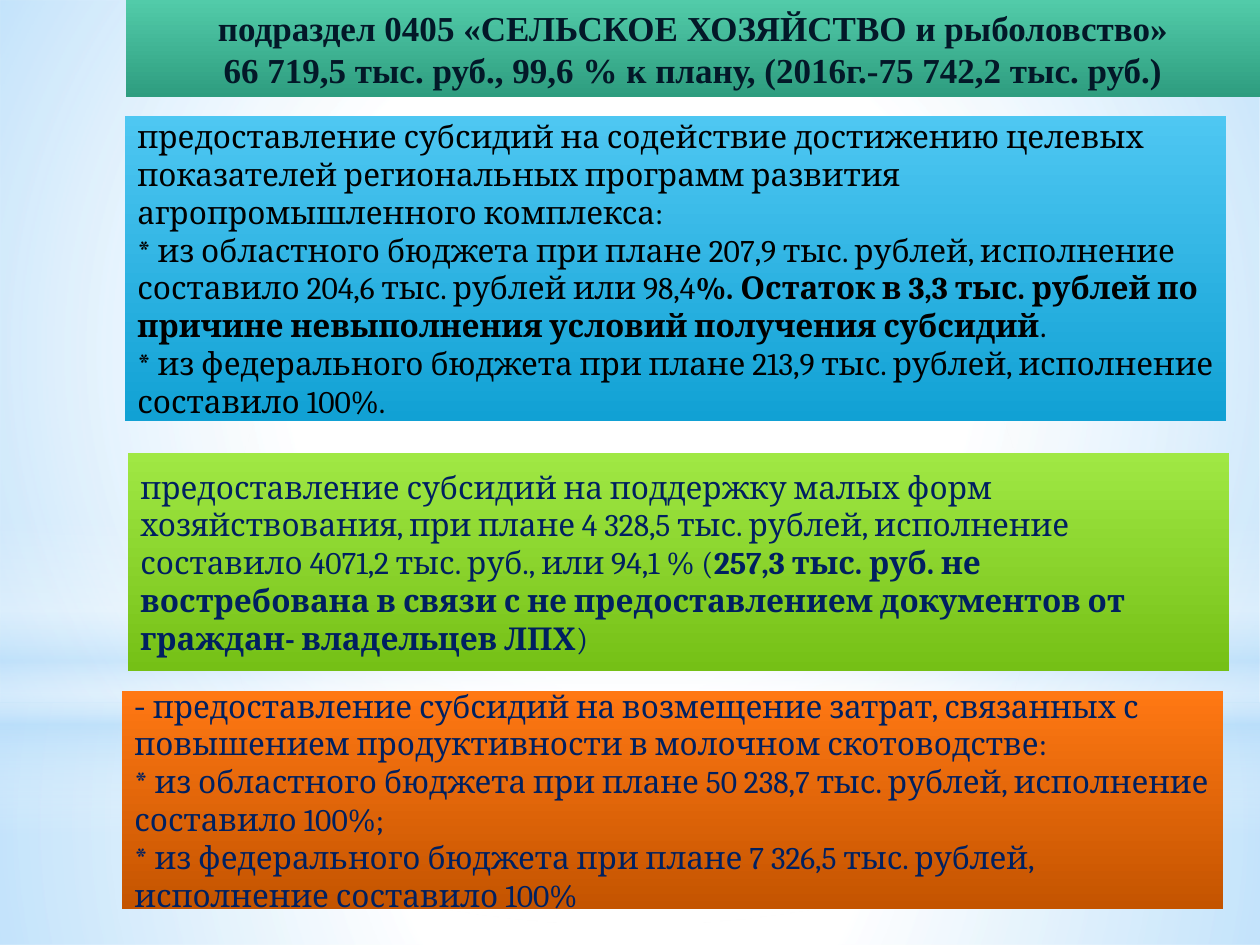
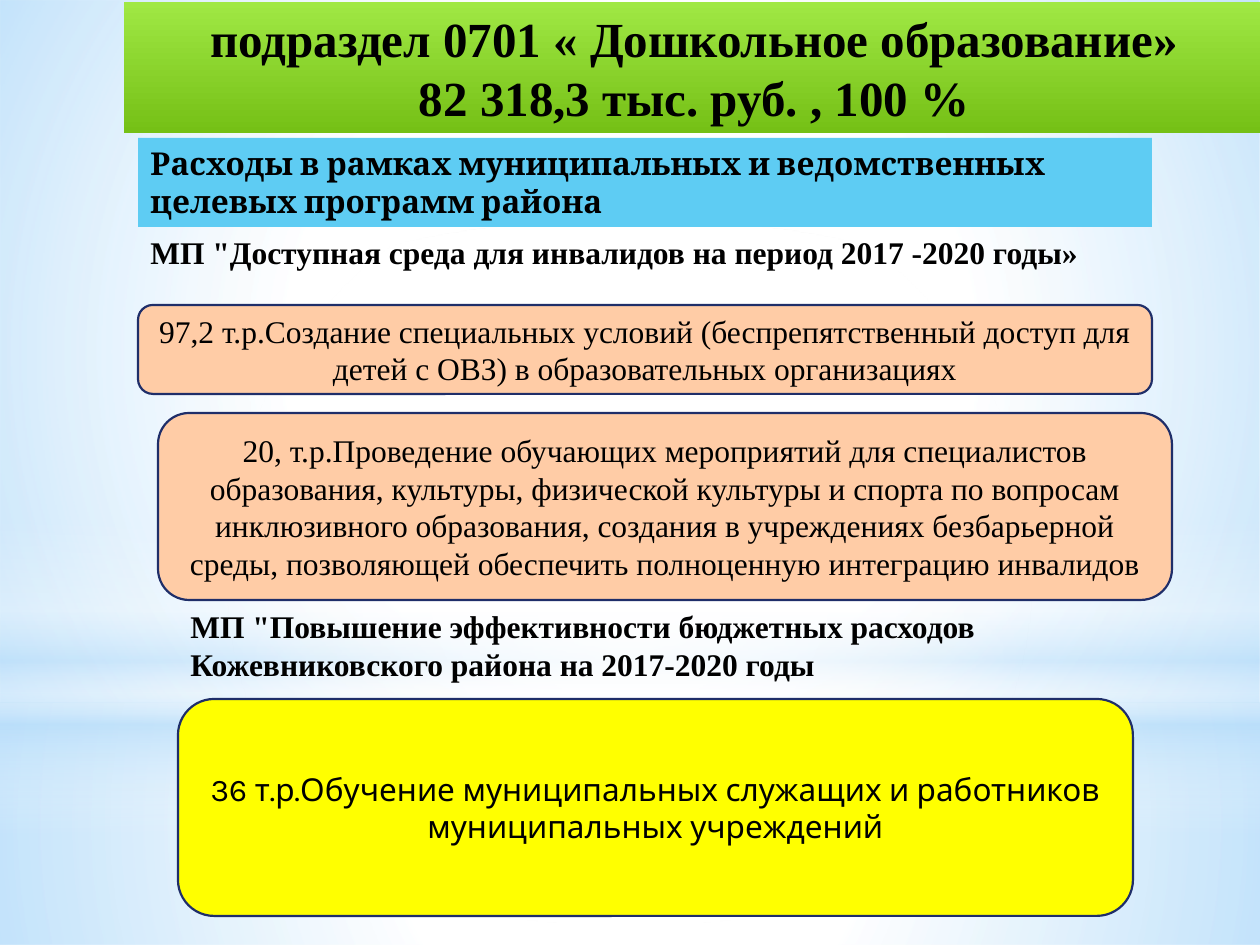
import pptx
import pptx.util
import pptx.dml.color
import pptx.enum.shapes
import pptx.enum.text
import pptx.oxml
import pptx.oxml.ns

RGB = pptx.dml.color.RGBColor
SHAPE = pptx.enum.shapes.MSO_SHAPE
ALIGN = pptx.enum.text.PP_ALIGN
ANCHOR = pptx.enum.text.MSO_ANCHOR
PX = 914400 / 126

WHITE = RGB(0xFF, 0xFF, 0xFF)
MIST = RGB(0xB4, 0xDC, 0xFA)
BLACK = RGB(0, 0, 0)
INK = RGB(0x03, 0x18, 0x28)
NAVY = RGB(0x00, 0x20, 0x60)
OUTLINE = RGB(0x1F, 0x2E, 0x69)
SKY = RGB(0x5E, 0xCC, 0xF3)
PEACH = RGB(0xFF, 0xCC, 0xA6)
YELLOW = RGB(0xFF, 0xFF, 0x00)
TEAL_BLEND = [(0, RGB(0x52, 0xCB, 0xA9), 100), (100, RGB(0x2E, 0x9D, 0x7F), 100)]
BLUE_BLEND = [(0, RGB(0x4E, 0xC7, 0xF2), 100), (100, RGB(0x11, 0xA1, 0xD4), 100)]
GREEN_BLEND = [(0, RGB(0xA0, 0xE8, 0x44), 100), (100, RGB(0x75, 0xC0, 0x16), 100)]
ORANGE_BLEND = [(0, RGB(0xFF, 0x78, 0x13), 100), (100, RGB(0xC4, 0x54, 0x00), 100)]

SERIF = "Times New Roman"
BOOK = "Cambria"
SANS = "Karla"


def add_shape(page, kind, place, fill, radial=False):
    shape = page.shapes.add_shape(kind, *[round(n * PX) for n in place])
    shape.shadow.inherit = False
    shape.line.fill.background()
    if fill is None:
        shape.fill.background()
    elif isinstance(fill, RGB):
        shape.fill.solid()
        shape.fill.fore_color.rgb = fill
    else:
        stops = "".join(
            f'<a:gs pos="{at * 1000}"><a:srgbClr val="{color}">'
            f'<a:alpha val="{opacity * 1000}"/></a:srgbClr></a:gs>'
            for at, color, opacity in fill)
        course = '<a:lin ang="5400000" scaled="0"/>'
        if radial:
            course = ('<a:path path="circle"><a:fillToRect l="50000" t="50000" '
                      'r="50000" b="50000"/></a:path>')
        blend = pptx.oxml.parse_xml(
            f'<a:gradFill {pptx.oxml.ns.nsdecls("a")} rotWithShape="1">'
            f'<a:gsLst>{stops}</a:gsLst>{course}</a:gradFill>')
        shape.element.spPr.find(pptx.oxml.ns.qn("a:prstGeom")).addnext(blend)
    return shape


def write(shape, paragraphs, font, size, color, align=ALIGN.LEFT, anchor=ANCHOR.MIDDLE):
    frame = shape.text_frame
    frame.word_wrap = True
    frame.vertical_anchor = anchor
    for index, spans in enumerate(paragraphs):
        para = frame.paragraphs[0] if index == 0 else frame.add_paragraph()
        para.alignment = align
        for text, bold, *other_font in spans:
            span = para.add_run()
            span.text = text
            span.font.name = other_font[0] if other_font else font
            span.font.size = pptx.util.Pt(size)
            span.font.bold = bold
            span.font.color.rgb = color


deck = pptx.Presentation()
deck.slide_width = round(1260 * PX)
deck.slide_height = round(945 * PX)
farming, preschool = [deck.slides.add_slide(deck.slide_layouts[6]) for _ in range(2)]

backdrop = [
    (SHAPE.RECTANGLE, (0, 703, 1260, 242), True,
     [(0, WHITE, 91), (37, WHITE, 76), (100, MIST, 79)]),
    (SHAPE.RECTANGLE, (0, 0, 1260, 703), True,
     [(0, WHITE, 89), (48, WHITE, 62), (100, MIST, 79)]),
    (SHAPE.RECTANGLE, (0, 519, 1260, 315), False,
     [(0, WHITE, 0), (29, WHITE, 30), (45, MIST, 40),
      (55, WHITE, 26), (65, MIST, 60), (100, WHITE, 0)]),
    (SHAPE.OVAL, (0, 220, 1260, 703), True, [(0, WHITE, 100), (56, WHITE, 0)]),
]
master_tree = deck.slide_master.shapes.element
for index, (kind, place, radial, stops) in enumerate(backdrop):
    glow = add_shape(farming, kind, place, stops, radial)
    glow.element.nvSpPr.cNvPr.set("id", str(100 + index))
    master_tree.insert(2 + index, glow.element)

subsidies = [
    ((125, 116, 1101, 305), BLUE_BLEND, BLACK, [
        [("предоставление субсидий на содействие достижению целевых показателей "
          "региональных программ развития агропромышленного комплекса:", False)],
        [("* из областного бюджета при плане 207,9 тыс. рублей, исполнение "
          "составило 204,6 тыс. рублей или 98,4", False),
         ("%. Остаток в 3,3 тыс. рублей по причине невыполнения условий "
          "получения субсидий", True),
         (".", False)],
        [("* из федерального бюджета при плане 213,9 тыс. рублей, исполнение "
          "составило 100%.", False)]]),
    ((128, 453, 1101, 218), GREEN_BLEND, NAVY, [
        [("предоставление субсидий на поддержку малых форм хозяйствования, при "
          "плане 4 328,5 тыс. рублей, исполнение составило 4071,2 тыс. руб., "
          "или 94,1 % (", False),
         ("257,3 тыс. руб. не востребована в связи с не предоставлением "
          "документов от граждан- владельцев ЛПХ", True),
         (")", False)]]),
    ((122, 691, 1101, 218), ORANGE_BLEND, NAVY, [
        [("- ", False, SANS),
         ("предоставление субсидий на возмещение затрат, связанных с повышением "
          "продуктивности в молочном скотоводстве:", False)],
        [("* из областного бюджета при плане 50 238,7 тыс. рублей, исполнение "
          "составило 100%;", False)],
        [("* из федерального бюджета при плане 7 326,5 тыс. рублей, исполнение "
          "составило 100%", False)]]),
]
for place, blend, color, paragraphs in subsidies:
    panel = add_shape(farming, SHAPE.RECTANGLE, place, blend)
    write(panel, paragraphs, BOOK, 18, color)

titles = [
    (farming, (126, 0, 1134, 97), TEAL_BLEND, INK, 20,
     ["подраздел 0405 «СЕЛЬСКОЕ ХОЗЯЙСТВО и рыболовство»",
      "66 719,5 тыс. руб., 99,6 % к плану, (2016г.-75 742,2 тыс. руб.)"]),
    (preschool, (124, 2, 1140, 131), GREEN_BLEND, BLACK, 28,
     ["подраздел 0701 « Дошкольное образование»",
      "82 318,3 тыс. руб. , 100 %"]),
]
for page, place, blend, color, size, lines in titles:
    band = add_shape(page, SHAPE.RECTANGLE, place, blend)
    write(band, [[(line, True)] for line in lines], SERIF, size, color,
          ALIGN.CENTER, ANCHOR.TOP)

headings = [
    ((138, 138, 1014, 89), SKY, BOOK,
     "Расходы в рамках муниципальных и ведомственных целевых программ района"),
    ((138, 227, 1014, 50), None, SERIF,
     "МП \"Доступная среда для инвалидов на период 2017 -2020 годы»"),
    ((178, 601, 1014, 89), None, SERIF,
     "МП \"Повышение эффективности бюджетных расходов Кожевниковского района "
     "на 2017-2020 годы"),
]
for place, fill, font, text in headings:
    if fill is None:
        heading = preschool.shapes.add_textbox(*[round(n * PX) for n in place])
    else:
        heading = add_shape(preschool, SHAPE.RECTANGLE, place, fill)
    write(heading, [[(text, True)]], font, 18, BLACK, anchor=ANCHOR.TOP)

measures = [
    ((138, 305, 1014, 89), PEACH, SERIF,
     "97,2 т.р.Создание специальных условий (беспрепятственный доступ для детей "
     "с ОВЗ) в образовательных организациях"),
    ((158, 413, 1014, 187), PEACH, SERIF,
     "20, т.р.Проведение обучающих мероприятий для специалистов образования, "
     "культуры, физической культуры и спорта по вопросам инклюзивного "
     "образования, создания в учреждениях безбарьерной среды, позволяющей "
     "обеспечить полноценную интеграцию инвалидов"),
    ((178, 699, 955, 217), YELLOW, SANS,
     "36 т.р.Обучение муниципальных служащих и работников муниципальных учреждений"),
]
for place, fill, font, text in measures:
    card = add_shape(preschool, SHAPE.ROUNDED_RECTANGLE, place, fill)
    card.line.color.rgb = OUTLINE
    card.line.width = pptx.util.Pt(1.25)
    write(card, [[(text, False)]], font, 18, BLACK, ALIGN.CENTER)

deck.save("out.pptx")
